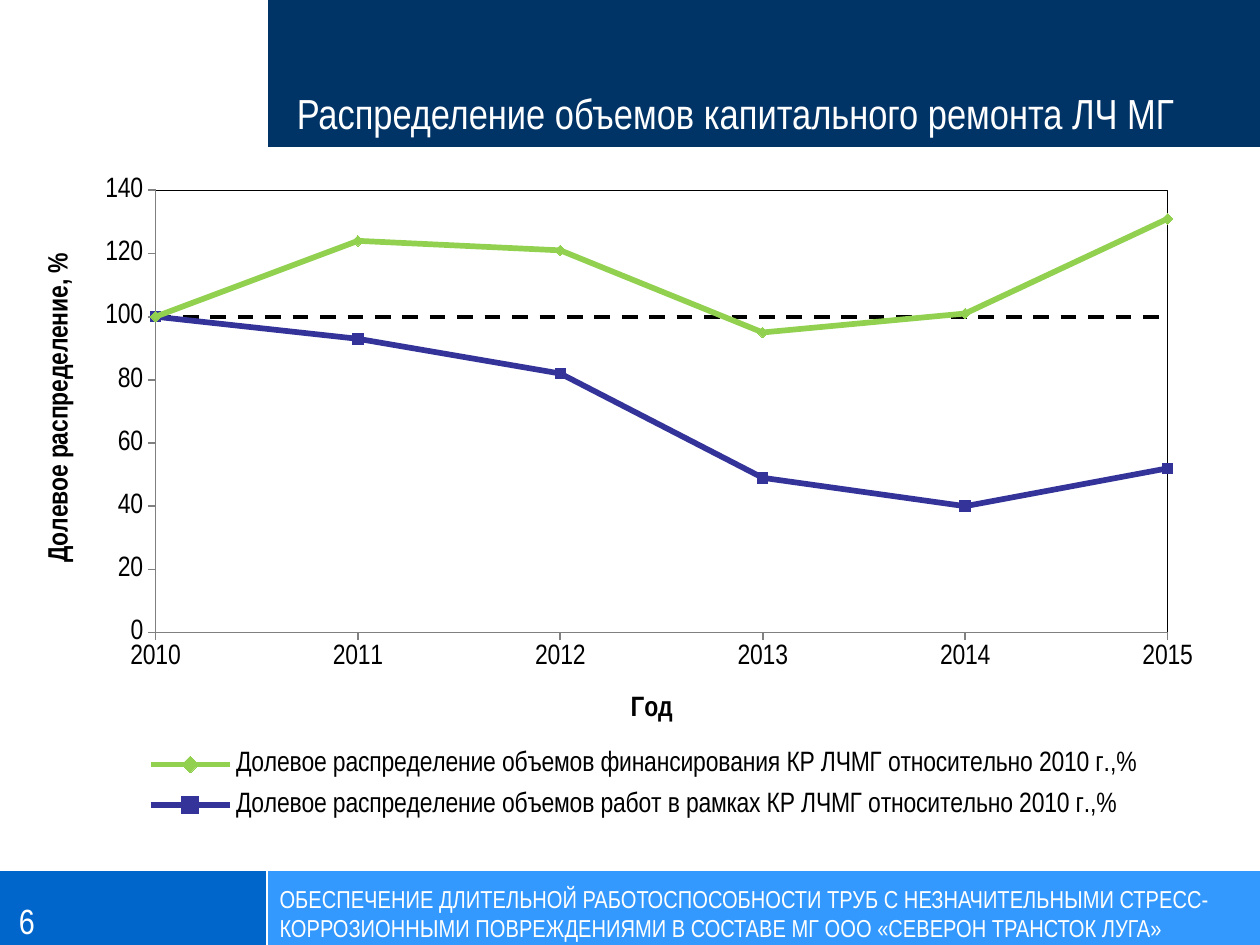
from dataclasses import dataclass

from lxml.etree import SubElement
from pptx import Presentation
from pptx.chart.data import XyChartData
from pptx.dml.color import RGBColor
from pptx.enum.chart import XL_CHART_TYPE, XL_LEGEND_POSITION, XL_MARKER_STYLE, XL_TICK_MARK
from pptx.enum.dml import MSO_LINE
from pptx.enum.shapes import MSO_CONNECTOR, MSO_SHAPE
from pptx.enum.text import MSO_ANCHOR
from pptx.oxml import parse_xml
from pptx.oxml.ns import nsdecls, qn
from pptx.util import Inches, Pt

WIDTH, HEIGHT = Inches(10), Inches(7.5)
FONT = "Arial Narrow"
WHITE = RGBColor(0xFF, 0xFF, 0xFF)
BLACK = RGBColor(0x00, 0x00, 0x00)
GRAY = RGBColor(0x80, 0x80, 0x80)
NAVY = RGBColor(0x00, 0x33, 0x66)
BLUE = RGBColor(0x00, 0x66, 0xCC)
SKY = RGBColor(0x33, 0x99, 0xFF)
GREEN = RGBColor(0x92, 0xD0, 0x50)
INDIGO = RGBColor(0x33, 0x33, 0x99)

SPLIT = WIDTH * 0.212
HEADER_BOTTOM = HEIGHT * 0.157
FOOTER_TOP = HEIGHT * 0.921

YEARS = range(2010, 2016)
SERIES = [
    ("Долевое распределение объемов финансирования КР ЛЧМГ относительно 2010 г.,%",
     (100, 124, 121, 95, 101, 131), GREEN, 3.25, XL_MARKER_STYLE.DIAMOND),
    ("Долевое распределение объемов работ в рамках КР ЛЧМГ относительно 2010 г.,%",
     (100, 93, 82, 49, 40, 52), INDIGO, 3.25, XL_MARKER_STYLE.SQUARE),
    ("Базовый уровень", (100,) * 6, BLACK, 2.25, XL_MARKER_STYLE.NONE),
]


@dataclass
class Box:
    """Rectangle in slide units."""
    left: float
    top: float
    width: float
    height: float

    def inner(self, left, top, width, height):
        """Return the part of the box given by shares of its size."""
        return Box(self.left + self.width * left, self.top + self.height * top,
                   self.width * width, self.height * height)

    def bounds(self):
        """Return whole-number left, top, width and height."""
        return [round(value) for value in (self.left, self.top, self.width, self.height)]


def add_panel(slide, box, color):
    """Draw a plain filled rectangle."""
    panel = slide.shapes.add_shape(MSO_SHAPE.RECTANGLE, *box.bounds())
    panel.shadow.inherit = False
    panel.fill.solid()
    panel.fill.fore_color.rgb = color
    panel.line.fill.background()


def add_rule(slide, *ends):
    """Draw a thin white dividing line."""
    rule = slide.shapes.add_connector(MSO_CONNECTOR.STRAIGHT, *map(round, ends))
    rule.line.color.rgb = WHITE
    rule.line.width = Pt(1.25)
    SubElement(rule._element.spPr, qn("a:effectLst"))


def add_label(slide, box, text, size, anchor=MSO_ANCHOR.BOTTOM, inset=(0, 0)):
    """Place white text in a box."""
    frame = slide.shapes.add_textbox(*box.bounds()).text_frame
    frame.word_wrap = True
    frame.vertical_anchor = anchor
    frame.margin_left = frame.margin_right = Inches(inset[0])
    frame.margin_top = frame.margin_bottom = Inches(inset[1])
    frame.text = text
    font = frame.paragraphs[0].runs[0].font
    font.name, font.size, font.color.rgb = FONT, Pt(size), WHITE


def add_header(slide, box):
    """Build the title band."""
    add_panel(slide, box, NAVY)
    add_rule(slide, box.left, box.top, box.left, box.top + box.height)
    add_rule(slide, 0, box.top + box.height, WIDTH, box.top + box.height)
    add_label(slide, box.inner(0.03, 0, 0.97, 0.93),
              "Распределение объемов капитального ремонта ЛЧ МГ", 24)


def add_footer(slide, box):
    """Build the band with the page number and the topic."""
    share = SPLIT / box.width
    add_panel(slide, box.inner(0, 0, share, 1), BLUE)
    add_panel(slide, box.inner(share, 0, 1 - share, 1), SKY)
    add_rule(slide, SPLIT, box.top, SPLIT, box.top + box.height)
    add_rule(slide, box.left, box.top, box.left + box.width, box.top)
    add_label(slide, box.inner(share, 0.1, 1 - share, 0.9),
              "ОБЕСПЕЧЕНИЕ ДЛИТЕЛЬНОЙ РАБОТОСПОСОБНОСТИ ТРУБ С НЕЗНАЧИТЕЛЬНЫМИ "
              "СТРЕСС-КОРРОЗИОННЫМИ ПОВРЕЖДЕНИЯМИ В СОСТАВЕ МГ ООО «СЕВЕРОН ТРАНСТОК ЛУГА»",
              14, MSO_ANCHOR.TOP, (0.1, 0.05))
    add_label(slide, box.inner(0.015, 0.08, 0.196, 0.88), "6", 20)


def set_layout(element, after, inner=False, **shares):
    """Fix the place of a chart part after the named child."""
    for old in element.findall(qn("c:layout")):
        element.remove(old)
    layout = parse_xml(f"<c:layout {nsdecls('c')}><c:manualLayout/></c:layout>")
    manual = layout[0]
    if inner:
        SubElement(manual, qn("c:layoutTarget")).set("val", "inner")
    for name in ("x", "y"):
        SubElement(manual, qn(f"c:{name}Mode")).set("val", "edge")
    for name, share in shares.items():
        SubElement(manual, qn(f"c:{name}")).set("val", str(share))
    if after:
        element.findall(qn(after))[-1].addnext(layout)
    else:
        element.insert(0, layout)


def style_axis(axis, title, low, high, step, x, y):
    """Set scale, lines, labels and title of an axis."""
    axis.minimum_scale, axis.maximum_scale, axis.major_unit = low, high, step
    axis.has_major_gridlines = False
    axis.major_tick_mark = XL_TICK_MARK.OUTSIDE
    axis.minor_tick_mark = XL_TICK_MARK.NONE
    axis.format.line.color.rgb = GRAY
    axis.format.line.width = Pt(1)
    axis.tick_labels.number_format = "0"
    axis.tick_labels.number_format_is_linked = False
    frame = axis.axis_title.text_frame
    frame.text = title
    title_font = frame.paragraphs[0].runs[0].font
    title_font.bold = True
    for font in (title_font, axis.tick_labels.font):
        font.name, font.size, font.color.rgb = FONT, Pt(16), BLACK
    set_layout(axis.axis_title._element, "c:tx", x=x, y=y)


def style_series(series, color, width, marker):
    """Set line and marker of a series."""
    series.smooth = False
    series.format.line.color.rgb = color
    series.format.line.width = Pt(width)
    series.marker.style = marker
    if marker == XL_MARKER_STYLE.NONE:
        series.format.line.dash_style = MSO_LINE.DASH
        return
    series.marker.size = 6
    series.marker.format.fill.solid()
    series.marker.format.fill.fore_color.rgb = color
    series.marker.format.line.color.rgb = color


def style_legend(chart):
    """Show the legend below the plot without the reference line."""
    chart.has_legend = True
    legend = chart.legend
    legend.position = XL_LEGEND_POSITION.RIGHT
    legend.include_in_layout = False
    legend.font.name, legend.font.size, legend.font.color.rgb = FONT, Pt(16), BLACK
    entry = parse_xml(f'<c:legendEntry {nsdecls("c")}><c:idx val="{len(SERIES) - 1}"/>'
                      '<c:delete val="1"/></c:legendEntry>')
    legend._element.find(qn("c:legendPos")).addnext(entry)
    set_layout(legend._element, "c:legendEntry", x=0.08, y=0.84, w=0.87, h=0.14)


def add_share_chart(slide, box):
    """Build the chart of yearly shares."""
    data = XyChartData()
    for name, values, *_ in SERIES:
        series = data.add_series(name)
        for year, value in zip(YEARS, values):
            series.add_data_point(year, value)
    chart = slide.shapes.add_chart(XL_CHART_TYPE.XY_SCATTER_LINES, *box.bounds(), data).chart
    chart.has_title = False
    chart.font.name, chart.font.size, chart.font.color.rgb = FONT, Pt(10), BLACK
    plot = chart.plots[0]
    plot.vary_by_categories = False
    for series, (_, _, color, width, marker) in zip(plot.series, SERIES):
        style_series(series, color, width, marker)
    style_axis(chart.category_axis, "Год", YEARS[0], YEARS[-1], 1, 0.5, 0.77)
    style_axis(chart.value_axis, "Долевое распределение, %", 0, 140, 20, 0.02, 0.13)
    style_legend(chart)
    area = chart._chartSpace.chart.plotArea
    set_layout(area, None, inner=True, x=0.115, y=0.046, w=0.829, h=0.643)
    area.append(parse_xml(
        f'<c:spPr {nsdecls("c", "a")}><a:noFill/><a:ln w="{Pt(0.75)}"><a:solidFill>'
        f'<a:srgbClr val="{BLACK}"/></a:solidFill></a:ln></c:spPr>'))


def main():
    """Build and save the presentation."""
    presentation = Presentation()
    presentation.slide_width, presentation.slide_height = WIDTH, HEIGHT
    slide = presentation.slides.add_slide(presentation.slide_layouts[6])
    page = Box(0, 0, WIDTH, HEIGHT)
    add_header(slide, Box(SPLIT, 0, WIDTH - SPLIT, HEADER_BOTTOM))
    add_footer(slide, Box(0, FOOTER_TOP, WIDTH, HEIGHT - FOOTER_TOP))
    add_share_chart(slide, page.inner(0.012, 0.168, 0.969, 0.728))
    presentation.save("out.pptx")


if __name__ == "__main__":
    main()
